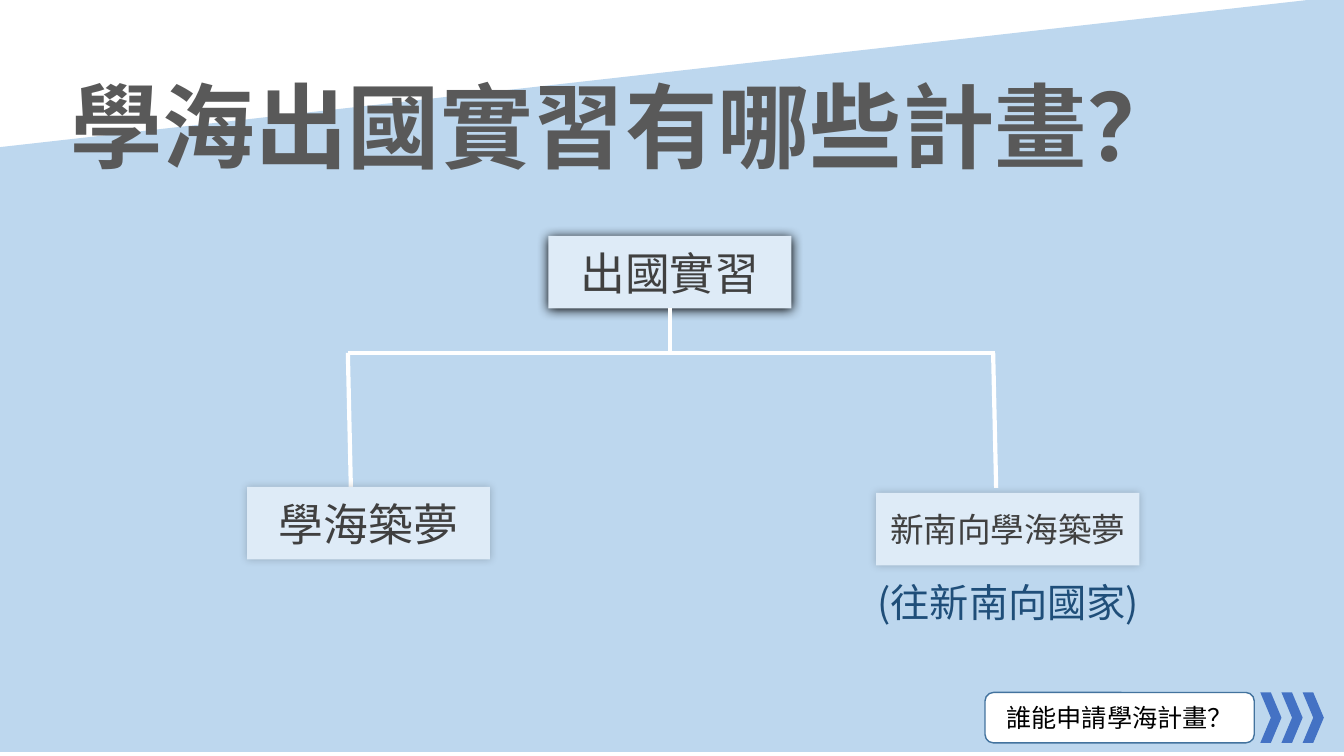
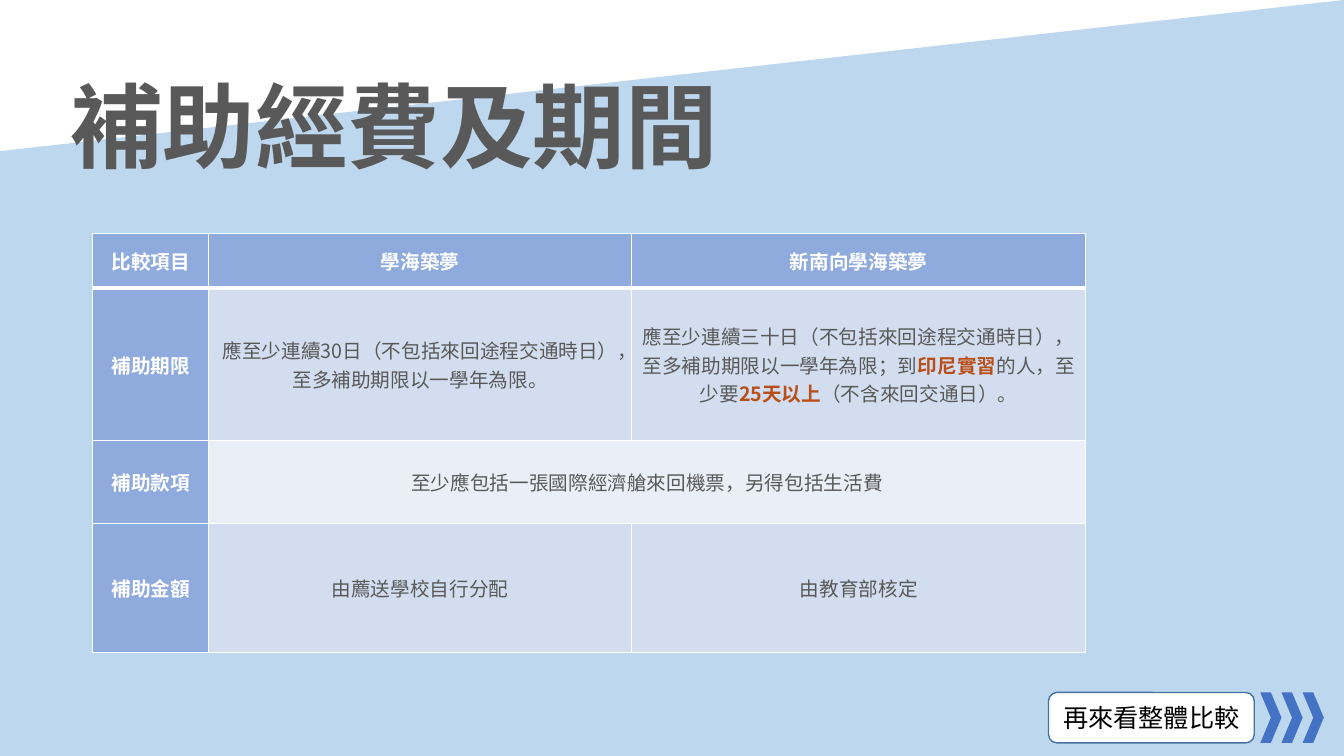
import dataclasses

import pptx
import pptx.dml.color
import pptx.enum.shapes
import pptx.enum.text
import pptx.oxml
import pptx.oxml.ns
import pptx.util

RGB = pptx.dml.color.RGBColor
SHAPES = pptx.enum.shapes.MSO_SHAPE
ALIGN = pptx.enum.text.PP_ALIGN
ANCHOR = pptx.enum.text.MSO_ANCHOR
inches = pptx.util.Inches

# Shared look
FONT = "Noto Sans CJK SC"
SKY = RGB(0xBD, 0xD7, 0xEE)
WHITE = RGB(0xFF, 0xFF, 0xFF)
BLACK = RGB(0x00, 0x00, 0x00)
TEXT_GRAY = RGB(0x59, 0x59, 0x59)
BOX_TEXT = RGB(0x40, 0x40, 0x40)
BOX_FILL = RGB(0xDE, 0xEB, 0xF7)
NOTE_BLUE = RGB(0x1F, 0x4E, 0x79)
CARD_LINE = RGB(0x43, 0x73, 0x9E)
ARROW_BLUE = RGB(0x44, 0x72, 0xC4)
HEAD_BLUE = RGB(0x8F, 0xAA, 0xDC)
ROW_DARK = RGB(0xD2, 0xDE, 0xEF)
ROW_LIGHT = RGB(0xEA, 0xEF, 0xF7)
EMPHASIS = RGB(0xBA, 0x4E, 0x18)


@dataclasses.dataclass
class Box:
    """A rectangle in inches."""
    left: float
    top: float
    width: float
    height: float

    def point(self, across, down):
        """The point at the given percentages of this box."""
        return (inches(self.left + self.width * across / 100),
                inches(self.top + self.height * down / 100))

    def area(self, across, down, wide, high):
        """The box at the given percentages of this box."""
        return Box(self.left + self.width * across / 100, self.top + self.height * down / 100,
                   self.width * wide / 100, self.height * high / 100)

    def emu(self):
        return [inches(length) for length in (self.left, self.top, self.width, self.height)]


SLIDE = Box(0, 0, 13.33, 7.5)


def style_paragraph(paragraph, size, color, bold=False, align=ALIGN.CENTER):
    paragraph.alignment = align
    font = paragraph.font
    font.size, font.bold, font.name = pptx.util.Pt(size), bold, FONT
    font.color.rgb = color
    defaults = paragraph._p.pPr.find(pptx.oxml.ns.qn("a:defRPr"))
    defaults.append(pptx.oxml.parse_xml(
        f'<a:ea {pptx.oxml.ns.nsdecls("a")} typeface="{FONT}"/>'))


def add_filled_shape(slide, kind, box, fill, line=None):
    shape = slide.shapes.add_shape(kind, *box.emu())
    shape.shadow.inherit = False
    shape.fill.solid()
    shape.fill.fore_color.rgb = fill
    if line is None:
        shape.line.fill.background()
    else:
        shape.line.color.rgb = line
        shape.line.width = pptx.util.Pt(1)
    return shape


def write_centered(shape, text, size, color):
    frame = shape.text_frame
    frame.word_wrap = False
    frame.vertical_anchor = ANCHOR.MIDDLE
    frame.text = text
    style_paragraph(frame.paragraphs[0], size, color)


def add_titled_slide(presentation, title, title_width, band_top=0):
    slide = presentation.slides.add_slide(presentation.slide_layouts[5])
    # Slanted band, behind the title
    band = add_filled_shape(slide, SHAPES.FLOWCHART_MANUAL_INPUT,
                            Box(0, band_top, SLIDE.width, SLIDE.height), SKY)
    band.element.getparent().insert(2, band.element)
    # Title
    heading = slide.shapes.title
    heading.left, heading.top, heading.width, heading.height = Box(0.6, 0.64, title_width, 1.21).emu()
    frame = heading.text_frame
    frame.text = title
    frame.word_wrap = False
    frame.auto_size = pptx.enum.text.MSO_AUTO_SIZE.SHAPE_TO_FIT_TEXT
    frame.vertical_anchor = ANCHOR.TOP
    style_paragraph(frame.paragraphs[0], 66, TEXT_GRAY, True, ALIGN.LEFT)
    return slide


def add_footer(slide, box, text):
    """A card naming the next topic, then three chevrons."""
    step = box.height * 0.42
    gap = box.height * 0.12
    card = Box(box.left, box.top, box.width - 3 * step - gap, box.height)
    write_centered(add_filled_shape(slide, SHAPES.ROUNDED_RECTANGLE, card, WHITE, CARD_LINE),
                   text, 18, BLACK)
    for number in range(1, 4):
        left = box.left + box.width - number * step
        add_filled_shape(slide, SHAPES.CHEVRON, Box(left, box.top, step, box.height), ARROW_BLUE)


def add_shadow(shape, opacity, blur, distance, angle):
    effects = shape.element.spPr.find(pptx.oxml.ns.qn("a:effectLst"))
    effects.append(pptx.oxml.parse_xml(
        f'<a:outerShdw {pptx.oxml.ns.nsdecls("a")} blurRad="{pptx.util.Pt(blur)}" '
        f'dist="{pptx.util.Pt(distance)}" dir="{angle * 60000}">'
        f'<a:srgbClr val="{BLACK}"><a:alpha val="{opacity * 1000}"/></a:srgbClr></a:outerShdw>'))


def add_white_line(slide, start, end):
    line = slide.shapes.add_connector(pptx.enum.shapes.MSO_CONNECTOR.STRAIGHT, *start, *end)
    line.line.color.rgb = WHITE
    line.line.width = pptx.util.Pt(3)
    line.element.spPr.append(pptx.oxml.parse_xml(
        f'<a:effectLst {pptx.oxml.ns.nsdecls("a")}/>'))
    return line


def add_program_tree(slide, box):
    # Rail and branches
    rail = 29.59
    add_white_line(slide, box.point(11.04, rail), box.point(81.9, rail))
    for across in (11.04, 81.68):
        add_white_line(slide, box.point(across, rail), box.point(across + 0.33, 63.78))
    # Program boxes: text, size, left, top, width, shadow
    deep, soft = (100, 8.5, 1, 90), (20, 6, 0, 315)
    programs = [("出國實習", 32, 33, 0, 26.6, deep),
                ("學海築夢", 32, 0, 63.52, 26.6, soft),
                ("新南向學海築夢", 24, 68.87, 65.05, 28.81, soft)]
    shapes = []
    for text, size, across, down, wide, shadow in programs:
        shape = add_filled_shape(slide, SHAPES.RECTANGLE,
                                 box.area(across, down, wide, 18.37), BOX_FILL)
        add_shadow(shape, *shadow)
        write_centered(shape, text, size, BOX_TEXT)
        shapes.append(shape)
    # Trunk
    root = shapes[0]
    middle = root.left + root.width // 2
    trunk = add_white_line(slide, (middle, root.top + root.height),
                           (middle, box.point(0, rail)[1]))
    trunk.begin_connect(root, 2)
    # Note under the last program
    note = slide.shapes.add_textbox(*box.area(66.67, 85.46, 33.33, 14.54).emu())
    write_centered(note, "(往新南向國家)", 28, NOTE_BLUE)
    note.text_frame.word_wrap = True


def set_borders(cell, top, bottom):
    properties = cell._tc.get_or_add_tcPr()
    for index, (side, width) in enumerate(zip("LRTB", (1, 1, top, bottom))):
        properties.insert(index, pptx.oxml.parse_xml(
            f'<a:ln{side} {pptx.oxml.ns.nsdecls("a")} w="{pptx.util.Pt(width)}">'
            f'<a:solidFill><a:srgbClr val="{WHITE}"/></a:solidFill></a:ln{side}>'))


def fill_cell(cell, text, fill, color, bold):
    """Write one paragraph a line; text between asterisks is emphasised."""
    cell.fill.solid()
    cell.fill.fore_color.rgb = fill
    cell.vertical_anchor = ANCHOR.MIDDLE
    frame = cell.text_frame
    for index, line in enumerate(text.split("\n")):
        paragraph = frame.add_paragraph() if index else frame.paragraphs[0]
        style_paragraph(paragraph, 14, color, bold)
        for position, piece in enumerate(line.split("*")):
            run = paragraph.add_run()
            run.text = piece
            if position % 2:
                run.font.bold = True
                run.font.color.rgb = EMPHASIS


def add_comparison_table(slide, box):
    rows = [
        ["比較項目", "學海築夢", "新南向學海築夢"],
        ["補助期限",
         "應至少連續30日（不包括來回途程交通時日），\n至多補助期限以一學年為限。",
         "應至少連續三十日（不包括來回途程交通時日），\n"
         "至多補助期限以一學年為限；到*印尼實習*的人，至少要*25天以上*（不含來回交通日）。"],
        ["補助款項", "至少應包括一張國際經濟艙來回機票，另得包括生活費"],
        ["補助金額", "由薦送學校自行分配", "由教育部核定"],
    ]
    table = slide.shapes.add_table(len(rows), len(rows[0]), *box.emu()).table
    for column, share in zip(table.columns, (11.67, 42.6, 45.73)):
        column.width = inches(box.width * share / 100)
    for row, share in zip(table.rows, (13, 36.5, 19.7, 30.8)):
        row.height = inches(box.height * share / 100)
    # One answer across both programs
    table.cell(2, 1).merge(table.cell(2, 2))
    for row_index, texts in enumerate(rows):
        for column_index, text in enumerate(texts):
            cell = table.cell(row_index, column_index)
            if row_index == 0 or column_index == 0:
                fill_cell(cell, text, HEAD_BLUE, WHITE, True)
            else:
                fill_cell(cell, text, ROW_DARK if row_index % 2 else ROW_LIGHT, TEXT_GRAY, False)
            set_borders(cell, 3 if row_index == 1 else 1, 3 if row_index == 0 else 1)


def main():
    presentation = pptx.Presentation()
    presentation.slide_width = inches(SLIDE.width)
    presentation.slide_height = inches(SLIDE.height)

    programs = add_titled_slide(presentation, "學海出國實習有哪些計畫？", 11.31, -0.04)
    add_program_tree(programs, Box(2.45, 2.34, 9.06, 3.92))
    add_footer(programs, Box(9.77, 6.87, 3.36, 0.5), "誰能申請學海計畫？")

    funding = add_titled_slide(presentation, "補助經費及期間", 6.68)
    add_comparison_table(funding, Box(0.92, 2.32, 9.85, 4.15))
    add_footer(funding, Box(10.4, 6.87, 2.73, 0.5), "再來看整體比較")

    presentation.save("out.pptx")


if __name__ == "__main__":
    main()
